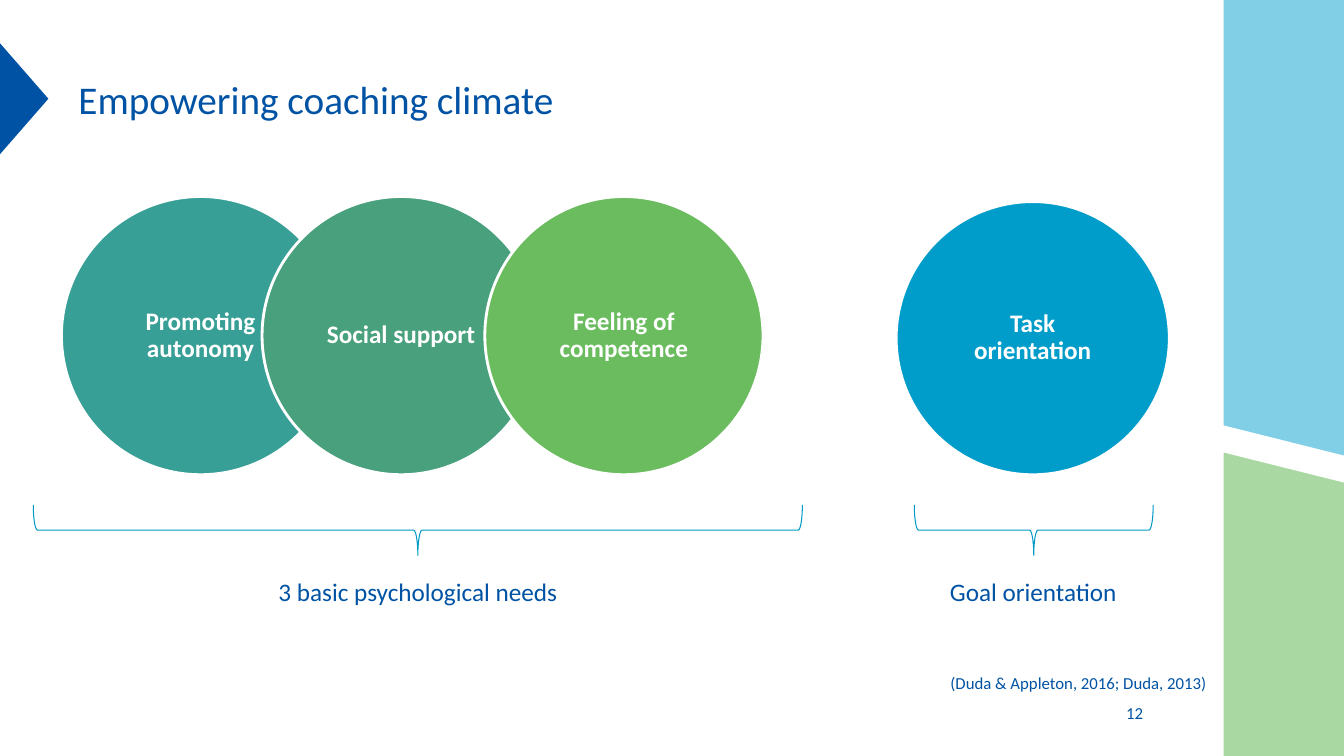
import pptx
import pptx.dml.color
import pptx.enum.shapes
import pptx.enum.text
import pptx.util

RGBColor = pptx.dml.color.RGBColor
Shape = pptx.enum.shapes.MSO_SHAPE
Align = pptx.enum.text.PP_ALIGN
Anchor = pptx.enum.text.MSO_ANCHOR

PX = 9144  # EMU per px, 100 px to the inch
NAVY = RGBColor(0x00, 0x53, 0xA4)
SKY = RGBColor(0x81, 0xCE, 0xE7)
LEAF = RGBColor(0xA9, 0xD8, 0xA2)
TEAL = RGBColor(0x37, 0x9F, 0x96)
SEA_GREEN = RGBColor(0x48, 0xA0, 0x7D)
GREEN = RGBColor(0x6B, 0xBC, 0x5F)
BLUE = RGBColor(0x00, 0x9D, 0xCA)
BRACE_BLUE = RGBColor(0x00, 0x9A, 0xC6)
WHITE = RGBColor(0xFF, 0xFF, 0xFF)


def write(shape, text, size, color, align, anchor, bold=False):
    frame = shape.text_frame
    frame.word_wrap = True
    frame.vertical_anchor = anchor
    paragraph = frame.paragraphs[0]
    paragraph.alignment = align
    run = paragraph.add_run()
    run.text = text
    run.font.name = "Calibri"
    run.font.size = pptx.util.Pt(size)
    run.font.bold = bold
    run.font.color.rgb = color
    return frame


def add_turned(kind, left, top, width, height):
    """Add a preset turned by 90 degrees that covers the given area."""
    shift = (width - height) / 2
    shape = slide.shapes.add_shape(
        kind, round((left + shift) * PX), round((top - shift) * PX), height * PX, width * PX)
    shape.rotation = 90
    shape.shadow.inherit = False
    return shape


deck = pptx.Presentation()
deck.slide_width = pptx.util.Inches(13.333)
deck.slide_height = pptx.util.Inches(7.5)
slide = deck.slides.add_slide(deck.slide_layouts[6])

# Slanted bands along the right edge
for color, corners in (
    (LEAF, [(1214, 449), (1334, 479), (1334, 750), (1214, 750)]),
    (SKY, [(1214, 0), (1334, 0), (1334, 452), (1214, 422)]),
):
    outline = slide.shapes.build_freeform(*corners[0], scale=PX)
    outline.add_line_segments(corners[1:], close=True)
    band = outline.convert_to_shape()
    band.shadow.inherit = False
    band.fill.solid()
    band.fill.fore_color.rgb = color
    band.line.fill.background()

title_marker = add_turned(Shape.ISOSCELES_TRIANGLE, 0, 43, 48, 110)
title_marker.fill.solid()
title_marker.fill.fore_color.rgb = NAVY
title_marker.line.fill.background()

# Overlapping needs, then the separate goal circle
for left, top, diameter, color, label in (
    (61, 195, 276, TEAL, "Promoting autonomy"),
    (260, 195, 276, SEA_GREEN, "Social support"),
    (481, 195, 276, GREEN, "Feeling of competence"),
    (889, 200, 271, BLUE, "Task orientation"),
):
    circle = slide.shapes.add_shape(
        Shape.OVAL, left * PX, top * PX, diameter * PX, diameter * PX)
    circle.shadow.inherit = False
    circle.fill.solid()
    circle.fill.fore_color.rgb = color
    circle.line.color.rgb = WHITE
    circle.line.width = pptx.util.Pt(2)
    frame = write(circle, label, 18, WHITE, Align.CENTER, Anchor.MIDDLE, bold=True)
    frame.margin_left = frame.margin_right = 15 * PX
    frame.margin_top = frame.margin_bottom = 5 * PX
    frame.paragraphs[0].line_spacing = 0.9

for left, width in ((33, 763), (907, 237)):
    brace = add_turned(Shape.RIGHT_BRACE, left, 501, width, 50)
    brace.adjustments[0] = 0.083
    brace.fill.background()
    brace.line.color.rgb = BRACE_BLUE
    brace.line.width = pptx.util.Pt(0.75)

for left, top, width, height, text, size, align, anchor in (
    (68, 43, 1076, 110, "Empowering coaching climate", 28, Align.LEFT, Anchor.MIDDLE),
    (199, 567, 431, 40, "3 basic psychological needs", 18, Align.CENTER, Anchor.TOP),
    (861, 567, 328, 40, "Goal orientation", 18, Align.CENTER, Anchor.TOP),
    (933, 662, 311, 30, "(Duda & Appleton, 2016; Duda, 2013)", 12, Align.LEFT, Anchor.TOP),
    (1071, 690, 73, 35, "12", 12, Align.RIGHT, Anchor.MIDDLE),
):
    box = slide.shapes.add_textbox(left * PX, top * PX, width * PX, height * PX)
    write(box, text, size, NAVY, align, anchor)

deck.save("out.pptx")
